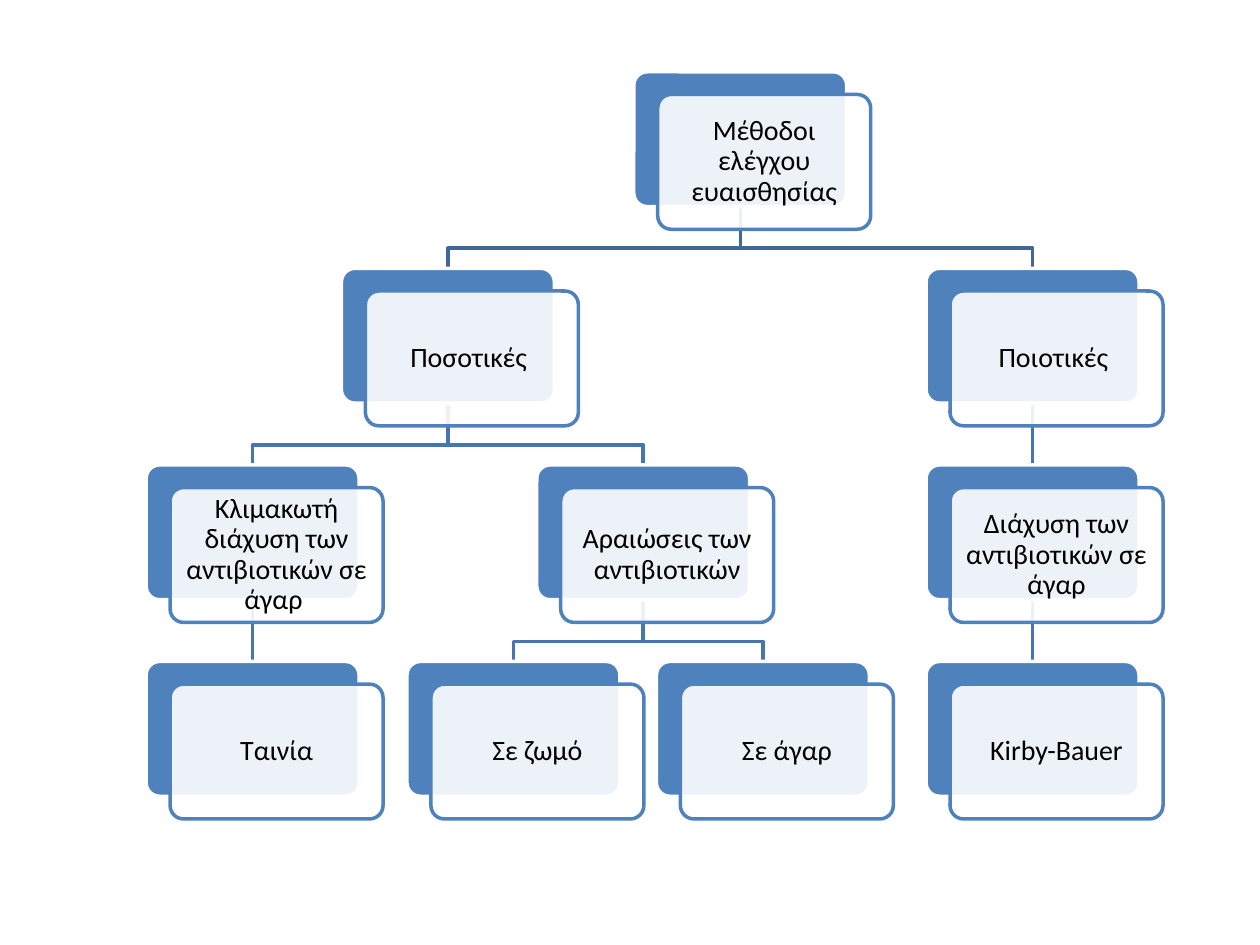
from lxml import etree
from pptx import Presentation
from pptx.dml.color import RGBColor
from pptx.enum.shapes import MSO_CONNECTOR, MSO_SHAPE
from pptx.enum.text import MSO_ANCHOR, PP_ALIGN
from pptx.oxml.ns import qn
from pptx.util import Inches, Pt

BLUE = RGBColor(0x4F, 0x81, 0xBD)
WHITE = RGBColor(0xFF, 0xFF, 0xFF)
BLACK = RGBColor(0x00, 0x00, 0x00)
TOP_LINK = RGBColor(0x3F, 0x67, 0x97)
LINK = RGBColor(0x48, 0x75, 0xAC)

BOX_W, BOX_H = 1.69, 1.07
TOP, LEVEL_STEP = 0.57, 1.56
OFFSET_X, OFFSET_Y = 0.19, 0.18  # front card against back card
BEND = 0.16  # height of the bend above the child box

# key: (left, level, parent, text)
NODES = {
    "methods": (5.03, 0, None, "Μέθοδοι ελέγχου ευαισθησίας"),
    "quantitative": (2.71, 1, "methods", "Ποσοτικές "),
    "gradient": (1.16, 2, "quantitative", "Κλιμακωτή διάχυση των αντιβιοτικών σε άγαρ "),
    "strip": (1.16, 3, "gradient", "Ταινία"),
    "dilutions": (4.26, 2, "quantitative", "Αραιώσεις των αντιβιοτικών"),
    "broth": (3.23, 3, "dilutions", "Σε ζωμό"),
    "agar": (5.21, 3, "dilutions", "Σε άγαρ"),
    "qualitative": (7.35, 1, "methods", "Ποιοτικές "),
    "diffusion": (7.35, 2, "qualitative", "Διάχυση των αντιβιοτικών σε άγαρ"),
    "kirby_bauer": (7.35, 3, "diffusion", "Kirby-Bauer"),
}

prs = Presentation()
prs.slide_width, prs.slide_height = Inches(10), Inches(7.5)
s = prs.slides.add_slide(prs.slide_layouts[6])


def add_card(left, top, fill, line):
    sp = s.shapes.add_shape(MSO_SHAPE.ROUNDED_RECTANGLE, Inches(left), Inches(top),
                            Inches(BOX_W), Inches(BOX_H))
    sp.adjustments[0] = 0.1
    sp.shadow.inherit = False
    sp.fill.solid()
    sp.fill.fore_color.rgb = fill
    sp.line.color.rgb = line
    sp.line.width = Pt(2)
    return sp


# Links go behind the cards
for left, level, parent, text in NODES.values():
    if parent is None:
        continue
    parent_left, parent_level = NODES[parent][:2]
    x1, x2 = parent_left + BOX_W / 2, left + BOX_W / 2
    y1, y2 = TOP + parent_level * LEVEL_STEP + BOX_H, TOP + level * LEVEL_STEP
    if x1 == x2:
        link = s.shapes.add_connector(MSO_CONNECTOR.STRAIGHT, Inches(x1), Inches(y1),
                                      Inches(x2), Inches(y2))
        etree.SubElement(link._element.spPr, qn("a:effectLst"))
    else:
        fb = s.shapes.build_freeform(Inches(x1), Inches(y1))
        bend = y2 - BEND
        fb.add_line_segments([(Inches(x), Inches(y)) for x, y in
                              ((x1, bend), (x2, bend), (x2, y2))], close=False)
        link = fb.convert_to_shape()
        link.shadow.inherit = False
        link.fill.background()
    link.line.color.rgb = TOP_LINK if level == 1 else LINK
    link.line.width = Pt(2)

for left, level, parent, text in NODES.values():
    top = TOP + level * LEVEL_STEP
    add_card(left, top, BLUE, WHITE)
    front = add_card(left + OFFSET_X, top + OFFSET_Y, WHITE, BLUE)
    color = front._element.spPr.find(qn("a:solidFill")).find(qn("a:srgbClr"))
    etree.SubElement(color, qn("a:alpha"), val="90000")

    tf = front.text_frame
    tf.word_wrap = True
    tf.vertical_anchor = MSO_ANCHOR.MIDDLE
    tf.margin_left = tf.margin_right = tf.margin_top = tf.margin_bottom = Inches(0.04)
    p = tf.paragraphs[0]
    p.text = text
    p.alignment = PP_ALIGN.CENTER
    p.line_spacing = 0.9
    p.font.name = "Calibri"
    p.font.size = Pt(16)
    p.font.color.rgb = BLACK

prs.save("out.pptx")
